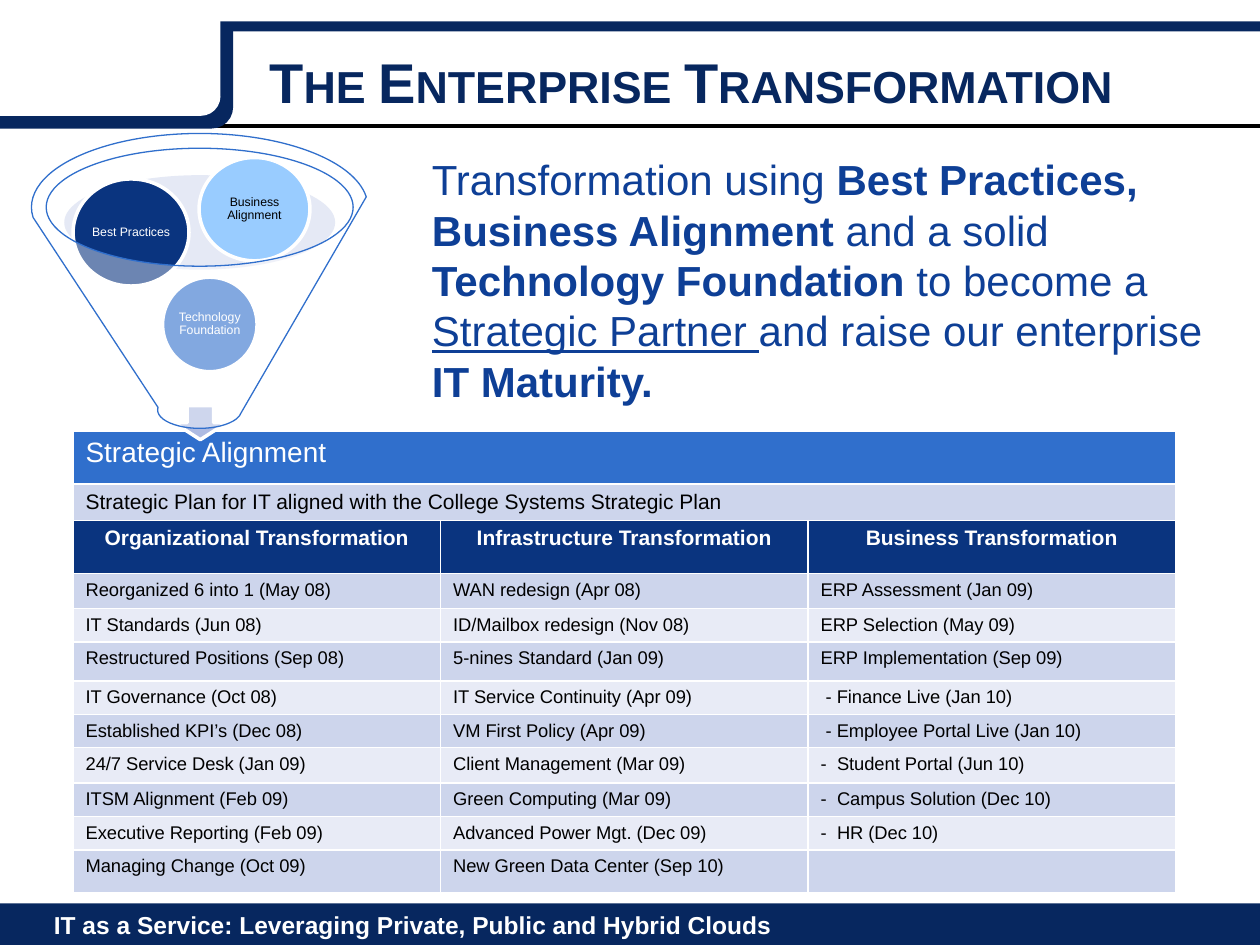
"""Build the enterprise transformation slide with its funnel and alignment table."""
from dataclasses import dataclass
from typing import NamedTuple, Optional

from lxml import etree
from pptx import Presentation
from pptx import util as u
from pptx.dml.color import RGBColor
from pptx.enum import shapes, text
from pptx.oxml.ns import qn

KIND = shapes.MSO_SHAPE
ALIGN = text.PP_ALIGN


@dataclass(frozen=True)
class Theme:
    font: str = "Arial"
    white: str = "FFFFFF"
    black: str = "000000"
    navy: str = "07275F"
    deep: str = "0A347F"
    body: str = "0E3F96"
    blue: str = "306FCC"
    sky: str = "99CCFF"
    haze: str = "BEC8E7"
    arrow: str = "AEBBE2"
    band_dark: str = "CDD5EC"
    band_light: str = "E8EBF6"
    title_size: float = 32
    body_size: float = 24
    footer_size: float = 14
    banner_size: float = 16
    head_size: float = 12
    cell_size: float = 10.5
    circle_size: float = 7


THEME = Theme()


class Area(NamedTuple):
    left: float
    top: float
    width: float
    height: float

    def lengths(self) -> list:
        return [u.Inches(value) for value in self]


class Form(NamedTuple):
    kind: int
    area: Area
    fill: str
    line: Optional[str] = None
    weight: float = 2
    alpha: int = 100
    label: str = ""
    ink: str = THEME.white


class Span(NamedTuple):
    words: str
    bold: bool = False
    underline: bool = False


class RowStyle(NamedTuple):
    fill: str
    size: float = THEME.cell_size
    ink: str = THEME.black
    bold: bool = False
    align: int = ALIGN.LEFT


FRAME = [
    Form(KIND.ROUNDED_RECTANGLE, Area(-0.17, 0, 2.02, 1.02), THEME.navy),
    Form(KIND.ROUNDED_RECTANGLE, Area(-0.17, -0.02, 1.92, 0.94), THEME.white),
    Form(KIND.RECTANGLE, Area(1.58, -0.02, 8.42, 0.14), THEME.white),
    Form(KIND.RECTANGLE, Area(1.58, 0, 8.42, 0.17), THEME.white),
]
FUNNEL = [
    Form(KIND.OVAL, Area(0.51, 1.39, 2.15, 0.75), THEME.haze, alpha=40),
    Form(KIND.DOWN_ARROW, Area(1.38, 3.22, 0.42, 0.27), THEME.arrow, THEME.white),
    Form(KIND.OVAL, Area(1.29, 2.2, 0.75, 0.75), THEME.blue, THEME.white, label="Technology Foundation"),
    Form(KIND.OVAL, Area(0.58, 1.42, 0.92, 0.85), THEME.deep, THEME.white, label="Best Practices"),
    Form(KIND.OVAL, Area(1.58, 1.25, 0.88, 0.82), THEME.sky, THEME.white, label="Business Alignment", ink=THEME.black),
    Form(KIND.FUNNEL, Area(0.25, 1.06, 2.67, 2.34), THEME.white, THEME.blue, 0.75, 40),
]
MESSAGE = [
    [
        Span("Transformation using "),
        Span("Best Practices, Business Alignment", bold=True),
        Span(" and a solid "),
        Span("Technology Foundation ", bold=True),
        Span("to become a "),
        Span("Strategic Partner ", underline=True),
        Span("and raise our enterprise"),
    ],
    [Span("IT Maturity.", bold=True)],
]
ROWS = [
    ("Strategic Alignment",),
    ("Strategic Plan for IT aligned with the College Systems Strategic Plan",),
    ("Organizational Transformation", "Infrastructure Transformation", "Business Transformation"),
    ("Reorganized 6 into 1 (May 08)", "WAN redesign (Apr 08)", "ERP Assessment (Jan 09)"),
    ("IT Standards (Jun 08)", "ID/Mailbox redesign (Nov 08)", "ERP Selection (May 09)"),
    ("Restructured Positions (Sep 08)", "5-nines Standard (Jan 09)", "ERP Implementation (Sep 09)"),
    ("IT Governance (Oct 08)", "IT Service Continuity (Apr 09)", "- Finance Live (Jan 10)"),
    ("Established KPI’s (Dec 08)", "VM First Policy (Apr 09)", "- Employee Portal Live (Jan 10)"),
    ("24/7 Service Desk (Jan 09)", "Client Management (Mar 09)", "-\tStudent Portal (Jun 10)"),
    ("ITSM Alignment (Feb 09)", "Green Computing (Mar 09)", "-\tCampus Solution (Dec 10)"),
    ("Executive Reporting (Feb 09)", "Advanced Power Mgt. (Dec 09)", "-\tHR (Dec 10)"),
    ("Managing Change (Oct 09)", "New Green Data Center (Sep 10)", ""),
]
HEIGHTS = [0.42, 0.17, 0.42, 0.28, 0.25, 0.31, 0.25, 0.23, 0.28, 0.25, 0.23, 0.34]
HEAD_STYLES = [
    RowStyle(THEME.blue, THEME.banner_size, THEME.white),
    RowStyle(THEME.band_dark, THEME.head_size),
    RowStyle(THEME.deep, THEME.head_size, THEME.white, True, ALIGN.CENTER),
]
BODY_STYLES = [RowStyle(THEME.band_light), RowStyle(THEME.band_dark)]


def style_font(font, size: float, ink: str, bold: bool = False) -> None:
    font.name, font.size, font.bold = THEME.font, u.Pt(size), bold
    font.color.rgb = RGBColor.from_string(ink)


def draw_form(page, form: Form) -> None:
    shape = page.shapes.add_shape(form.kind, *form.area.lengths())
    shape.shadow.inherit = False
    shape.fill.solid()
    shape.fill.fore_color.rgb = RGBColor.from_string(form.fill)
    if form.alpha < 100:
        color = shape.fill._xPr.find(qn("a:solidFill"))[0]
        etree.SubElement(color, qn("a:alpha"), val=str(form.alpha * 1000))
    if form.line:
        shape.line.color.rgb = RGBColor.from_string(form.line)
        shape.line.width = u.Pt(form.weight)
    else:
        shape.line.fill.background()
    if form.label:
        frame = shape.text_frame
        frame.word_wrap = True
        frame.vertical_anchor = text.MSO_ANCHOR.MIDDLE
        frame.margin_left = frame.margin_right = frame.margin_top = frame.margin_bottom = u.Inches(0.01)
        para = frame.paragraphs[0]
        para.text, para.alignment, para.line_spacing = form.label, ALIGN.CENTER, 0.9
        style_font(para.font, THEME.circle_size, form.ink)


def draw_rule(page, top: float) -> None:
    rule = page.shapes.add_connector(shapes.MSO_CONNECTOR.STRAIGHT, 0, u.Inches(top), u.Inches(10), u.Inches(top))
    rule.line.color.rgb = RGBColor.from_string(THEME.black)
    rule.line.width = u.Pt(2.25)
    etree.SubElement(rule._element.spPr, qn("a:effectLst"))


def draw_line_of_text(page, area: Area, words: str, size: float, ink: str):
    box = page.shapes.add_textbox(*area.lengths())
    box.text_frame.word_wrap = True
    para = box.text_frame.paragraphs[0]
    para.text = words
    style_font(para.font, size, ink, True)
    return para


def draw_message(page, area: Area) -> None:
    frame = page.shapes.add_textbox(*area.lengths()).text_frame
    frame.word_wrap = True
    for index, spans in enumerate(MESSAGE):
        para = frame.add_paragraph() if index else frame.paragraphs[0]
        for span in spans:
            run = para.add_run()
            run.text = span.words
            style_font(run.font, THEME.body_size, THEME.body, span.bold)
            run.font.underline = span.underline


def fill_cell(cell, words: str, style: RowStyle) -> None:
    properties = cell._tc.get_or_add_tcPr()
    for side in "LRTB":
        line = etree.SubElement(properties, qn(f"a:ln{side}"), w=str(u.Pt(1)))
        color = etree.SubElement(etree.SubElement(line, qn("a:solidFill")), qn("a:srgbClr"))
        color.set("val", THEME.white)
    cell.fill.solid()
    cell.fill.fore_color.rgb = RGBColor.from_string(style.fill)
    cell.margin_bottom = u.Inches(0.04)
    para = cell.text_frame.paragraphs[0]
    para.text, para.alignment = words, style.align
    hanging = 0.13 if words.startswith("-\t") else 0
    margin = 0.04 if words.startswith("- ") else hanging
    para_properties = para._p.get_or_add_pPr()
    para_properties.set("marL", str(u.Inches(margin)))
    para_properties.set("indent", str(-u.Inches(hanging)))
    style_font(para.font, style.size, style.ink, style.bold)


def draw_table(page, area: Area) -> None:
    table = page.shapes.add_table(len(ROWS), 3, *area.lengths()).table
    for index, (words, height) in enumerate(zip(ROWS, HEIGHTS)):
        table.rows[index].height = u.Inches(height)
        style = HEAD_STYLES[index] if index < len(HEAD_STYLES) else BODY_STYLES[index % 2]
        if len(words) == 1:
            table.cell(index, 0).merge(table.cell(index, 2))
        for column in range(3):
            fill_cell(table.cell(index, column), words[column] if column < len(words) else "", style)


def main() -> None:
    deck = Presentation()
    deck.slide_width, deck.slide_height = u.Inches(10), u.Inches(7.5)
    page = deck.slides.add_slide(deck.slide_layouts[6])
    draw_form(page, Form(KIND.RECTANGLE, Area(-0.16, 7.17, 10.16, 0.33), THEME.navy))
    draw_form(page, Form(KIND.RECTANGLE, Area(1.85, 0, 8.15, 0.25), THEME.navy))
    draw_rule(page, 1)
    draw_line_of_text(page, Area(0.33, 7.17, 9.33, 0.34),
                      "IT as a Service: Leveraging Private, Public and Hybrid Clouds", THEME.footer_size, THEME.white)
    for form in FRAME:
        draw_form(page, form)
    title = draw_line_of_text(page, Area(2.04, 0.33, 7.5, 0.58),
                              "The Enterprise Transformation", THEME.title_size, THEME.navy)
    title.runs[0]._r.get_or_add_rPr().set("cap", "small")
    draw_table(page, Area(0.58, 3.42, 8.75, 3.72))
    draw_message(page, Area(3.33, 1.17, 6.5, 2.12))
    for form in FUNNEL:
        draw_form(page, form)
    deck.save("out.pptx")


if __name__ == "__main__":
    main()
